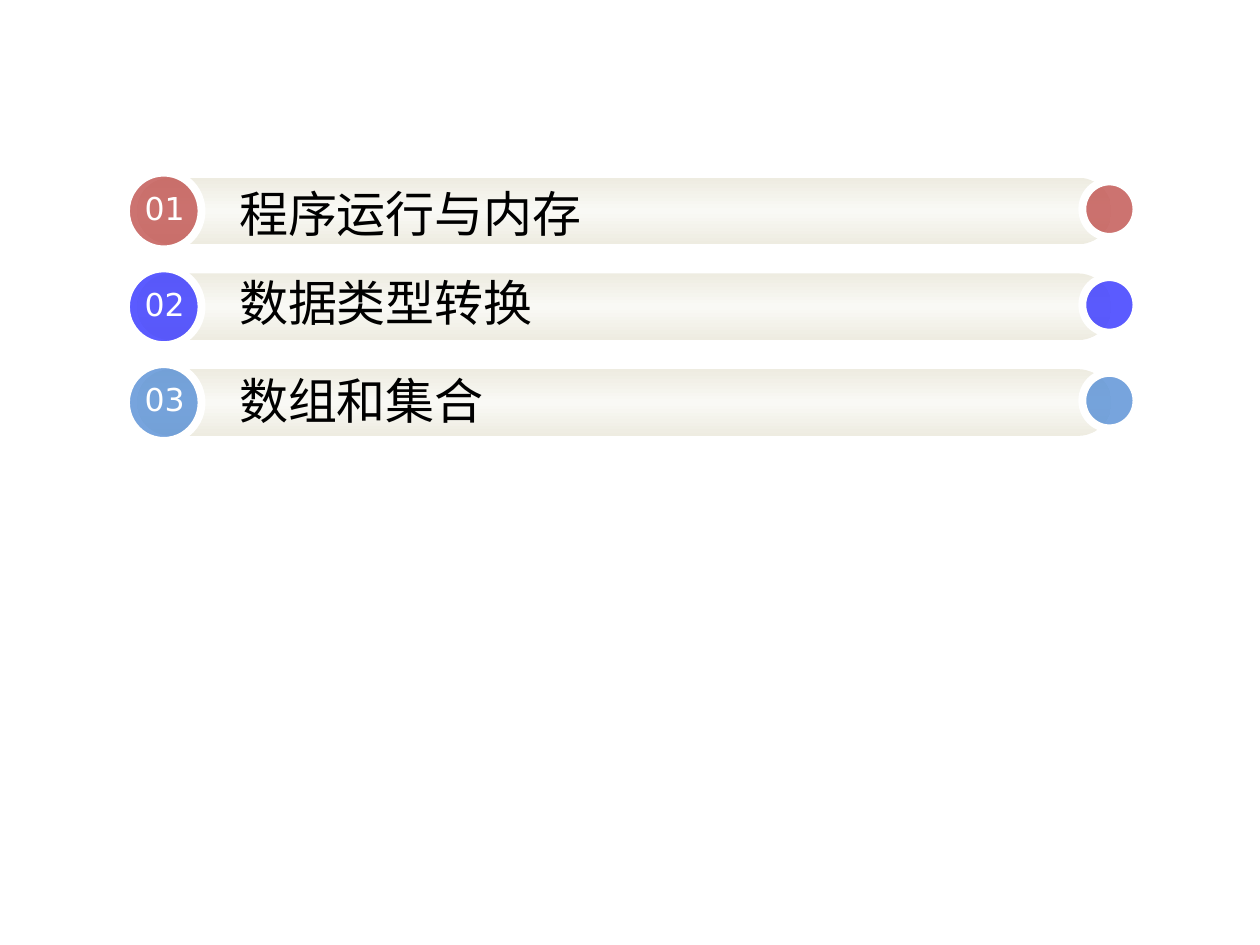
import copy
import pptx
import pptx.util
import pptx.dml.color
import pptx.enum.shapes
import pptx.oxml
import pptx.oxml.ns

RGB = pptx.dml.color.RGBColor
SHAPE = pptx.enum.shapes.MSO_SHAPE
Inches = pptx.util.Inches

WHITE = RGB(0xFF, 0xFF, 0xFF)
BLACK = RGB(0x00, 0x00, 0x00)
CREAM = RGB(0xEE, 0xEC, 0xE1)
PALE = RGB(0xF9, 0xF9, 0xF5)
RED = RGB(0xC0, 0x50, 0x4D)
BLUE = RGB(0x33, 0x33, 0xFF)
SKY = RGB(0x55, 0x8E, 0xD5)

LEFT, TOP, WIDTH, HEIGHT = 1, 1.37, 8.02, 0.61
ROW_PITCH = 0.76

# Number, title, colour, and how far the title sits below the row's top
AGENDA = [
    ("01", "程序运行与内存", RED, 0.04),
    ("02", "数据类型转换", BLUE, -0.02),
    ("03", "数组和集合", SKY, 0),
]


def add_bar(page, left, top, width, height):
    """Rounded bar shaded from cream through a pale middle to cream."""
    bar = page.shapes.add_shape(SHAPE.ROUNDED_RECTANGLE, Inches(left), Inches(top),
                                Inches(width), Inches(height))
    bar.adjustments[0] = 0.5
    bar.shadow.inherit = False
    bar.line.fill.background()
    bar.fill.gradient()
    bar.fill.gradient_angle = 90
    stops = bar.fill.gradient_stops
    for stop, color in zip(stops, (CREAM, PALE)):
        stop.color.rgb = color
    stops[1].position = 0.5
    stop_list = bar._element.spPr.find(".//" + pptx.oxml.ns.qn("a:gsLst"))
    last = copy.deepcopy(stop_list[0])
    last.set("pos", "100000")
    stop_list.append(last)


def add_disc(page, left, top, width, height, color):
    """Translucent disc with a white ring."""
    disc = page.shapes.add_shape(SHAPE.OVAL, Inches(left), Inches(top),
                                 Inches(width), Inches(height))
    disc.shadow.inherit = False
    disc.fill.solid()
    disc.fill.fore_color.rgb = color
    tint = disc._element.spPr.find(
        pptx.oxml.ns.qn("a:solidFill") + "/" + pptx.oxml.ns.qn("a:srgbClr"))
    tint.append(pptx.oxml.parse_xml(
        f'<a:alpha {pptx.oxml.ns.nsdecls("a")} val="80000"/>'))
    disc.line.color.rgb = WHITE
    disc.line.width = pptx.util.Pt(4.5)


def add_text(page, left, top, width, height, text, font, size, color):
    box = page.shapes.add_textbox(Inches(left), Inches(top), Inches(width), Inches(height))
    box.text_frame.word_wrap = True
    para = box.text_frame.paragraphs[0]
    para.text = text
    para.font.name = font
    para.font.size = pptx.util.Pt(size)
    para.font.color.rgb = color


def add_agenda_row(page, left, top, width, height, number, color):
    add_bar(page, left + 0.09, top + 0.04, width - 0.29, height - 0.08)
    add_disc(page, left, top, 0.6, height, color)
    add_text(page, left + 0.05, top + 0.08, 0.66, 0.4, number, "DejaVu Sans", 18, WHITE)
    add_disc(page, left + width - 0.43, top + 0.07, 0.43, 0.44, color)


def add_agenda(page, left, top, width, height):
    for row, (number, title, color, drop) in enumerate(AGENDA):
        row_top = top + row * ROW_PITCH
        add_agenda_row(page, left, row_top, width, height, number, color)
        add_text(page, left + 0.8, row_top + drop, 6.64, 0.57, title, "Arial", 28, BLACK)


def main():
    deck = pptx.Presentation()
    deck.slide_width, deck.slide_height = Inches(10), Inches(7.5)
    page = deck.slides.add_slide(deck.slide_layouts[6])
    add_agenda(page, LEFT, TOP, WIDTH, HEIGHT)
    deck.save("out.pptx")


if __name__ == "__main__":
    main()
